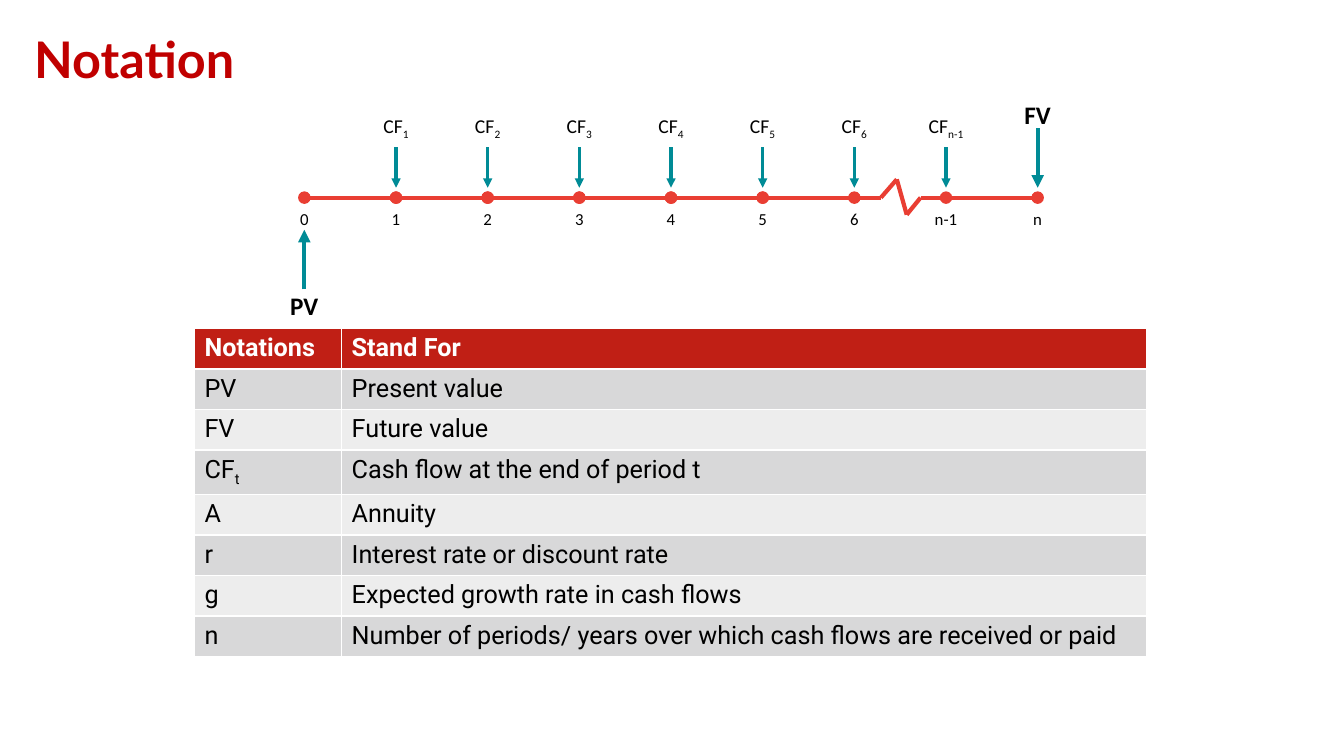
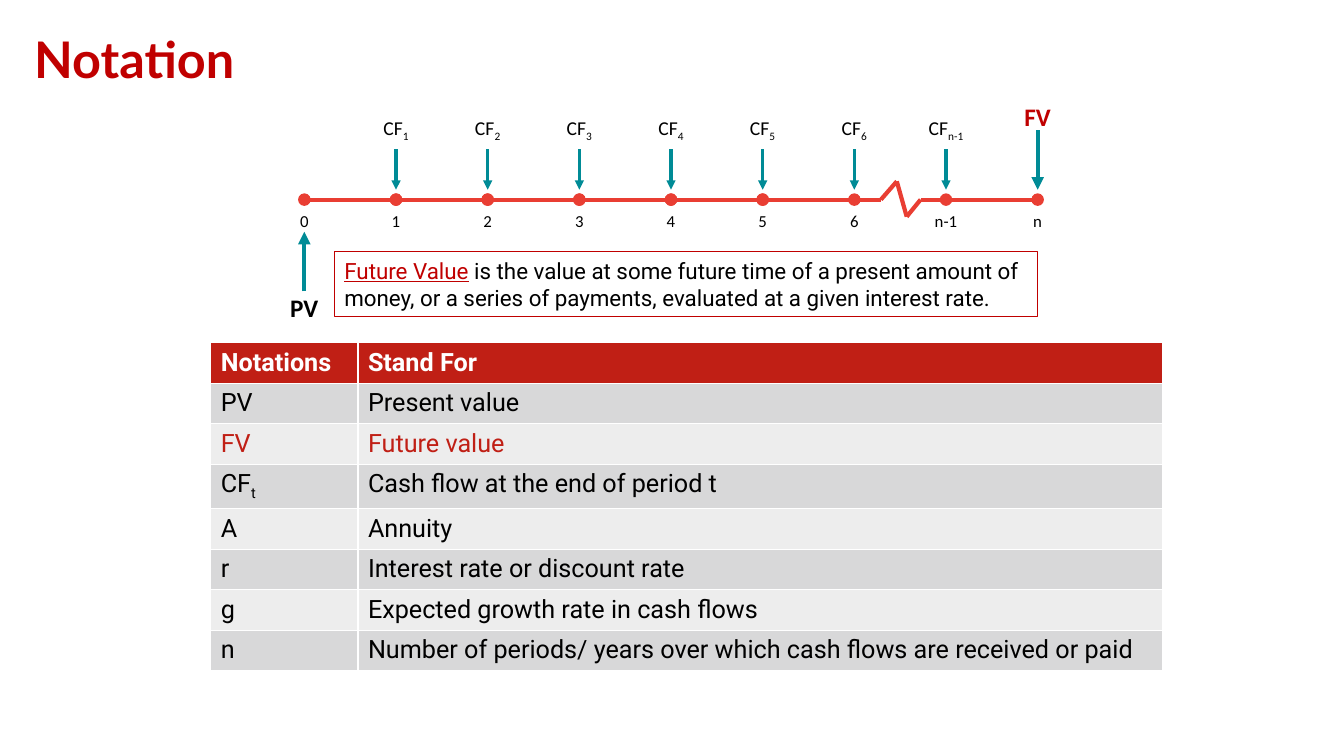
"""Build two slides that explain time value of money notation."""
from itertools import pairwise

from lxml import etree
from pptx import Presentation
from pptx.dml.color import RGBColor
from pptx.enum.shapes import MSO_CONNECTOR, MSO_SHAPE
from pptx.enum.text import MSO_ANCHOR, PP_ALIGN
from pptx.oxml.ns import qn
from pptx.util import Cm, Pt

STRAIGHT = MSO_CONNECTOR.STRAIGHT
RECTANGLE = MSO_SHAPE.RECTANGLE
TOP, MIDDLE = MSO_ANCHOR.TOP, MSO_ANCHOR.MIDDLE
LEFT, CENTER = PP_ALIGN.LEFT, PP_ALIGN.CENTER

COLORS = {
    "title": "C00000",
    "axis": "E93E33",
    "arrow": "008B96",
    "header": "C01F15",
    "dark_band": "D8D8D9",
    "light_band": "EDEDED",
    "text": "000000",
    "white": "FFFFFF",
}
TITLE_FONT, DIAGRAM_FONT, BODY_FONT = "Lato", "Calibri", "Roboto"

PERIODS = ["0", "1", "2", "3", "4", "5", "6", "n-1", "n"]
AXIS_LEFT, PERIOD_STEP = 7.67, 2.31
TICKS = [AXIS_LEFT + PERIOD_STEP * index for index in range(len(PERIODS))]
BREAK_POINTS = [(22.2, 0), (22.6, -0.46), (22.85, 0.43), (23.2, 0)]
LABEL_WIDTH = 1.4

COLUMN_WIDTHS = [3.71, 20.29]
ROW_HEIGHT = 1.02
NOTATIONS = [
    ("PV", "", "Present value"),
    ("FV", "", "Future value"),
    ("CF", "t", "Cash flow at the end of period t"),
    ("A", "", "Annuity"),
    ("r", "", "Interest rate or discount rate"),
    ("g", "", "Expected growth rate in cash flows"),
    ("n", "", "Number of periods/ years over which cash flows are received or paid"),
]


def rgb(name):
    return RGBColor.from_string(COLORS[name])


def format_run(run, font, size, color, bold=False):
    run.font.name = font
    run.font.size = Pt(size)
    run.font.color.rgb = rgb(color)
    run.font.bold = bold


def write(paragraph, text, font, size, color="text", bold=False, subscript=""):
    paragraph.text = text
    if subscript:
        run = paragraph.add_run()
        run.text = subscript
        run._r.get_or_add_rPr().set("baseline", "-25000")
    for run in paragraph.runs:
        format_run(run, font, size, color, bold)


def add_title(slide, text):
    box = slide.shapes.add_textbox(Cm(0.61), Cm(-0.05), Cm(29.21), Cm(3.25))
    box.text_frame.word_wrap = True
    box.text_frame.vertical_anchor = MIDDLE
    paragraph = box.text_frame.paragraphs[0]
    paragraph.line_spacing = 0.9
    write(paragraph, text, TITLE_FONT, 36, "title", bold=True)


def add_line(shapes, start, end, color, width, head=None, tail=None):
    points = [Cm(value) for value in (*start, *end)]
    connector = shapes.add_connector(STRAIGHT, *points)
    connector.line.color.rgb = rgb(color)
    connector.line.width = Pt(width)
    line = connector.line._get_or_add_ln()
    for tag, kind in (("a:headEnd", head), ("a:tailEnd", tail)):
        if kind:
            etree.SubElement(line, qn(tag)).set("type", kind)
    etree.SubElement(connector._element.spPr, qn("a:effectLst"))


def add_arrow(shapes, x, start_y, end_y, width=2.25):
    add_line(shapes, (x, start_y), (x, end_y), "arrow", width, tail="triangle")


def add_label(shapes, center, top, height, text, size, **style):
    left = center - LABEL_WIDTH / 2
    box = shapes.add_textbox(Cm(left), Cm(top), Cm(LABEL_WIDTH), Cm(height))
    box.text_frame.word_wrap = False
    paragraph = box.text_frame.paragraphs[0]
    paragraph.alignment = CENTER
    write(paragraph, text, DIAGRAM_FONT, size, **style)


def add_timeline(slide, axis, future_color):
    shapes = slide.shapes.add_group_shape().shapes
    for start, end in [*pairwise(TICKS[:7]), *pairwise(TICKS[7:])]:
        add_line(shapes, (start, axis), (end, axis), "axis", 3, "oval", "oval")
    break_line = [(TICKS[6], 0), *BREAK_POINTS, (TICKS[7], 0)]
    for (x1, y1), (x2, y2) in pairwise(break_line):
        add_line(shapes, (x1, axis + y1), (x2, axis + y2), "axis", 3)

    for tick, period in zip(TICKS, PERIODS):
        add_label(shapes, tick, axis + 0.15, 0.76, period, 12)
    for tick, period in list(zip(TICKS, PERIODS))[1:-1]:
        add_arrow(shapes, tick, axis - 1.27, axis - 0.25)
        add_label(shapes, tick, axis - 2.24, 0.86, "CF", 14, subscript=period)

    add_arrow(shapes, TICKS[0], axis + 2.31, axis + 0.81, width=3)
    add_label(shapes, TICKS[0], axis + 2.21, 1.02, "PV", 18, bold=True)
    add_arrow(shapes, TICKS[-1], axis - 1.75, axis - 0.25, width=3)
    add_label(shapes, TICKS[-1], axis - 2.59, 1.02, "FV", 18,
              color=future_color, bold=True)


def fill_cell(cell, fill, text, **style):
    cell.fill.solid()
    cell.fill.fore_color.rgb = rgb(fill)
    write(cell.text_frame.paragraphs[0], text, BODY_FONT, 18, **style)


def add_notation_table(slide, left, top, highlighted=None):
    row_count = len(NOTATIONS) + 1
    table = slide.shapes.add_table(
        row_count, len(COLUMN_WIDTHS), Cm(left), Cm(top),
        Cm(sum(COLUMN_WIDTHS)), Cm(ROW_HEIGHT * row_count)).table
    for column, width in zip(table.columns, COLUMN_WIDTHS):
        column.width = Cm(width)
    for column, heading in enumerate(("Notations", "Stand For")):
        fill_cell(table.cell(0, column), "header", heading, color="white", bold=True)
    for row, (symbol, subscript, meaning) in enumerate(NOTATIONS, start=1):
        band = "dark_band" if row % 2 else "light_band"
        color = "header" if symbol == highlighted else "text"
        fill_cell(table.cell(row, 0), band, symbol, color=color, subscript=subscript)
        fill_cell(table.cell(row, 1), band, meaning, color=color)


def add_definition(slide, term, explanation):
    shape = slide.shapes.add_shape(RECTANGLE, Cm(8.43), Cm(6.35), Cm(17.73), Cm(1.63))
    shape.shadow.inherit = False
    shape.fill.background()
    shape.line.color.rgb = rgb("title")
    shape.line.width = Pt(0.75)
    shape.text_frame.word_wrap = True
    shape.text_frame.vertical_anchor = TOP
    paragraph = shape.text_frame.paragraphs[0]
    paragraph.alignment = LEFT
    write(paragraph, term, BODY_FONT, 16, "title")
    paragraph.runs[0].font.underline = True
    run = paragraph.add_run()
    run.text = explanation
    format_run(run, BODY_FONT, 16, "text")


def main():
    presentation = Presentation()
    presentation.slide_width = Cm(33.87)
    presentation.slide_height = Cm(19.05)
    blank = presentation.slide_layouts[6]

    slide = presentation.slides.add_slide(blank)
    add_title(slide, "Notation")
    add_timeline(slide, 4.98, "text")
    add_notation_table(slide, 4.9, 8.28)

    slide = presentation.slides.add_slide(blank)
    add_title(slide, "Notation")
    add_timeline(slide, 5.03, "title")
    add_notation_table(slide, 5.31, 8.64, highlighted="FV")
    add_definition(
        slide, "Future Value",
        " is the value at some future time of a present amount of money, "
        "or a series of payments, evaluated at a given interest rate.")

    presentation.save("out.pptx")


if __name__ == "__main__":
    main()
